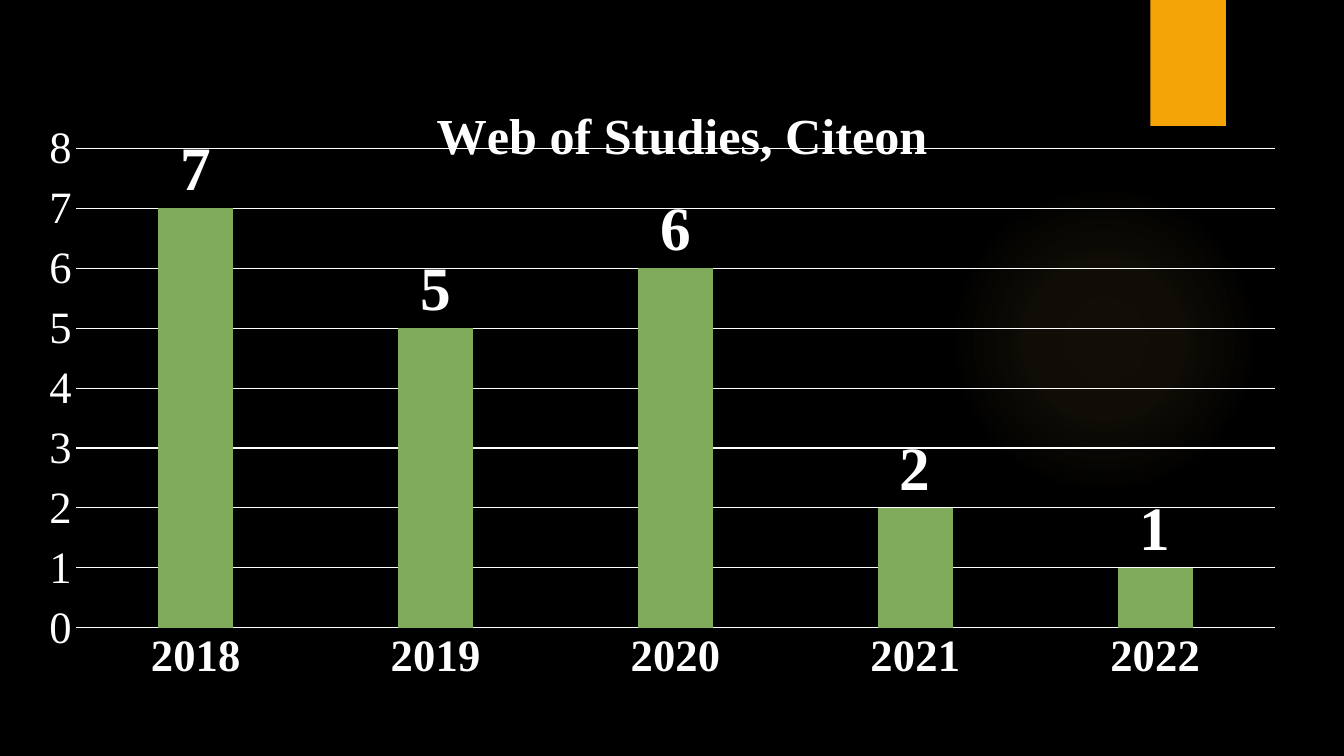
from lxml import etree
from pptx import Presentation
from pptx import util as u
from pptx.chart.data import CategoryChartData
from pptx.dml.color import RGBColor
from pptx.enum import chart as ch, shapes
from pptx.oxml import parse_xml
from pptx.oxml.ns import nsdecls, qn

# Content
TITLE = "Web of Studies, Citeon"
PAPERS = {"2018": 7, "2019": 5, "2020": 6, "2021": 2, "2022": 1}

# Style and places (inches)
FONT = "Times New Roman"
BLACK, WHITE, GREEN, ORANGE, GLOW = "000000", "FFFFFF", "7FAB5B", "F5A408", "FAC96A"
GLOW_AT = (9.41, 1.83, 3.08, 3.08)
TAB_AT = (11.41, 0, 0.75, 1.25)
CHART_AT = (0.49, 0.62, 12.38, 6.36)
GLOW_STOPS = [(0, 7), (36, 6), (69, 0)]  # position and opacity, percent
PLOT_BOX = {"x": 0.017, "y": 0.134, "w": 0.965, "h": 0.748}
TITLE_POS = {"x": 0.3, "y": 0.05}


def color(value):
    return RGBColor.from_string(value)


def place(box):
    return [u.Inches(v) for v in box]


def style_font(font, size, bold=False, name=FONT):
    font.size, font.bold, font.name = u.Pt(size), bold, name
    font.color.rgb = color(WHITE)


def style_line(line):
    line.color.rgb = color(WHITE)
    line.width = u.Pt(0.75)


def add_shape(kind, box):
    s = slide.shapes.add_shape(kind, *place(box))
    s.shadow.inherit = False
    s.line.fill.background()
    return s


def set_layout(parent, index, sizes, inner=False):
    for old in parent.findall(qn("c:layout")):
        parent.remove(old)
    layout = parse_xml(f"<c:layout {nsdecls('c')}><c:manualLayout/></c:layout>")
    entries = [("layoutTarget", "inner")] if inner else []
    entries += [("xMode", "edge"), ("yMode", "edge"), *sizes.items()]
    for tag, val in entries:
        etree.SubElement(layout[0], qn("c:" + tag)).set("val", str(val))
    parent.insert(index, layout)


prs = Presentation()
prs.slide_width, prs.slide_height = u.Inches(13.33), u.Inches(7.5)
slide = prs.slides.add_slide(prs.slide_layouts[6])
slide.background.fill.solid()
slide.background.fill.fore_color.rgb = color(BLACK)

# Soft glow
s = add_shape(shapes.MSO_SHAPE.OVAL, GLOW_AT)
s.fill.background()
stops = "".join(
    f'<a:gs pos="{pos * 1000}"><a:srgbClr val="{GLOW}">'
    f'<a:alpha val="{alpha * 1000}"/></a:srgbClr></a:gs>'
    for pos, alpha in GLOW_STOPS)
gradient = parse_xml(
    f'<a:gradFill {nsdecls("a")}><a:gsLst>{stops}</a:gsLst><a:path path="circle">'
    '<a:fillToRect l="50000" t="50000" r="50000" b="50000"/></a:path></a:gradFill>')
spPr = s._element.spPr
spPr.replace(spPr.find(qn("a:noFill")), gradient)

# Orange tab
s = add_shape(shapes.MSO_SHAPE.RECTANGLE, TAB_AT)
s.fill.solid()
s.fill.fore_color.rgb = color(ORANGE)

# Column chart
data = CategoryChartData()
data.categories = list(PAPERS)
data.add_series(TITLE, list(PAPERS.values()))
chart = slide.shapes.add_chart(
    ch.XL_CHART_TYPE.COLUMN_CLUSTERED, *place(CHART_AT), data).chart
style_font(chart.font, 10, name="League Spartan")
chart.has_legend = False

# Chart title
chart.has_title = True
r = chart.chart_title.text_frame.paragraphs[0].add_run()
r.text = TITLE
style_font(r.font, 36, True)
chart.chart_title.include_in_layout = False
set_layout(chart.chart_title._element, 1, TITLE_POS)

# Columns and values
plot = chart.plots[0]
plot.gap_width, plot.overlap, plot.vary_by_categories = 219, -27, False
fill = plot.series[0].format.fill
fill.solid()
fill.fore_color.rgb = color(GREEN)
labels = plot.series[0].data_labels
labels.show_value = True
labels.position = ch.XL_LABEL_POSITION.OUTSIDE_END
style_font(labels.font, 44, True)
set_layout(chart._chartSpace.chart.plotArea, 0, PLOT_BOX, inner=True)

# Axes
years, counts = chart.category_axis, chart.value_axis
for axis in (years, counts):
    axis.major_tick_mark = axis.minor_tick_mark = ch.XL_TICK_MARK.NONE
    style_font(axis.tick_labels.font, 32, axis is years)
style_line(years.format.line)
counts.format.line.fill.background()
counts.minimum_scale, counts.maximum_scale, counts.major_unit = 0, 8, 1
counts.has_major_gridlines = True
style_line(counts.major_gridlines.format.line)

prs.save("out.pptx")
